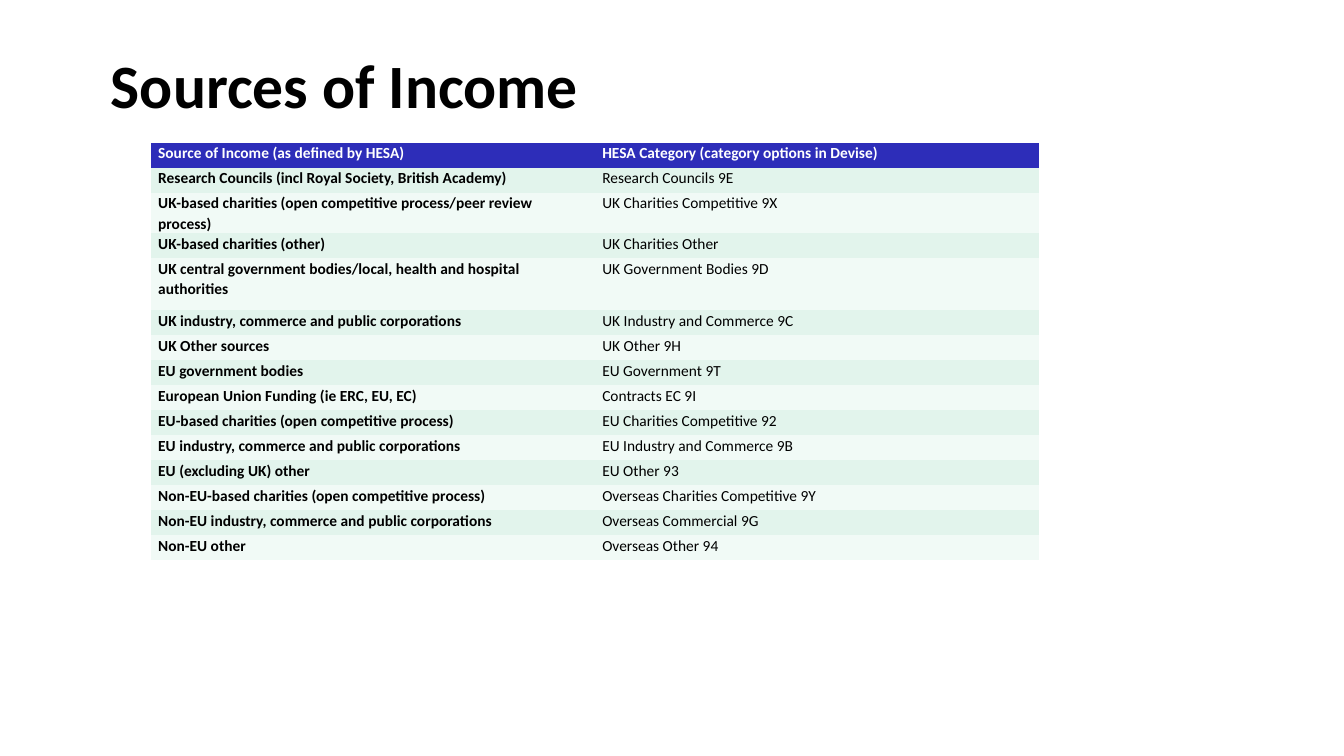
from pptx import Presentation
from pptx.dml.color import RGBColor
from pptx.enum.text import MSO_ANCHOR, PP_ALIGN
from pptx.util import Pt

LEFT = PP_ALIGN.LEFT
MIDDLE = MSO_ANCHOR.MIDDLE
BLACK = RGBColor(0x00, 0x00, 0x00)
WHITE = RGBColor(0xFF, 0xFF, 0xFF)
HEADER_BLUE = RGBColor(0x2D, 0x2D, 0xB9)
BANDS = [RGBColor(0xF1, 0xFA, 0xF6), RGBColor(0xE2, 0xF4, 0xEC)]
NO_STYLE_NO_GRID = "{2D5ABB26-0587-4C30-8999-92F81FD0307C}"
ROW_HEIGHT = 17.86
TALL_ROW, TALL_HEIGHT = 4, 36.86

INCOME_ROWS = [
    ("Source of Income (as defined by HESA)", "HESA Category (category options in Devise)"),
    ("Research Councils (incl Royal Society, British Academy)", "Research Councils 9E"),
    ("UK-based charities (open competitive process/peer review process)",
     "UK Charities Competitive 9X"),
    ("UK-based charities (other)", "UK Charities Other"),
    ("UK central government bodies/local, health and hospital authorities",
     "UK Government Bodies 9D"),
    ("UK industry, commerce and public corporations", "UK Industry and Commerce 9C"),
    ("UK Other sources", "UK Other 9H"),
    ("EU government bodies", "EU Government 9T"),
    ("European Union Funding (ie ERC, EU, EC)", "Contracts EC 9I"),
    ("EU-based charities (open competitive process)", "EU Charities Competitive 92"),
    ("EU industry, commerce and public corporations", "EU Industry and Commerce 9B"),
    ("EU (excluding UK) other", "EU Other 93"),
    ("Non-EU-based charities (open competitive process)", "Overseas Charities Competitive 9Y"),
    ("Non-EU industry, commerce and public corporations", "Overseas Commercial 9G"),
    ("Non-EU other", "Overseas Other 94"),
]


def set_attributes(target, values):
    for name, value in values.items():
        setattr(target, name, value)


def format_paragraph(paragraph, size, bold, color, **values):
    set_attributes(paragraph, values)
    set_attributes(paragraph.font, {"name": "Calibri", "size": Pt(size), "bold": bold})
    paragraph.font.color.rgb = color


presentation = Presentation()
presentation.slide_width, presentation.slide_height = Pt(960), Pt(540)
slide = presentation.slides.add_slide(presentation.slide_layouts[5])

# Title
title = slide.shapes.title
set_attributes(title, {"left": Pt(72), "top": Pt(18), "width": Pt(816), "height": Pt(84)})
title.text_frame.text = "Sources of Income"
title.text_frame.vertical_anchor = MIDDLE
format_paragraph(title.text_frame.paragraphs[0], 44, True, BLACK, alignment=LEFT)

# Income table
table_frame = slide.shapes.add_table(
    len(INCOME_ROWS), 2, Pt(108), Pt(102), Pt(634.4), Pt(ROW_HEIGHT * len(INCOME_ROWS)))
table = table_frame.table
table_frame._element.graphic.graphicData.tbl.tblPr.find("{*}tableStyleId").text = NO_STYLE_NO_GRID
for column in table.columns:
    column.width = Pt(317.2)

for row_index, texts in enumerate(INCOME_ROWS):
    is_header = row_index == 0
    table.rows[row_index].height = Pt(TALL_HEIGHT if row_index == TALL_ROW else ROW_HEIGHT)
    for column_index, text in enumerate(texts):
        cell = table.cell(row_index, column_index)
        set_attributes(cell, {
            "text": text, "margin_left": Pt(5), "margin_right": Pt(5),
            "margin_top": Pt(0), "margin_bottom": Pt(0)})
        cell.fill.solid()
        cell.fill.fore_color.rgb = HEADER_BLUE if is_header else BANDS[row_index % 2]
        format_paragraph(
            cell.text_frame.paragraphs[0], 11, is_header or column_index == 0,
            WHITE if is_header else BLACK, line_spacing=1.07, space_after=Pt(8))

presentation.save("out.pptx")
